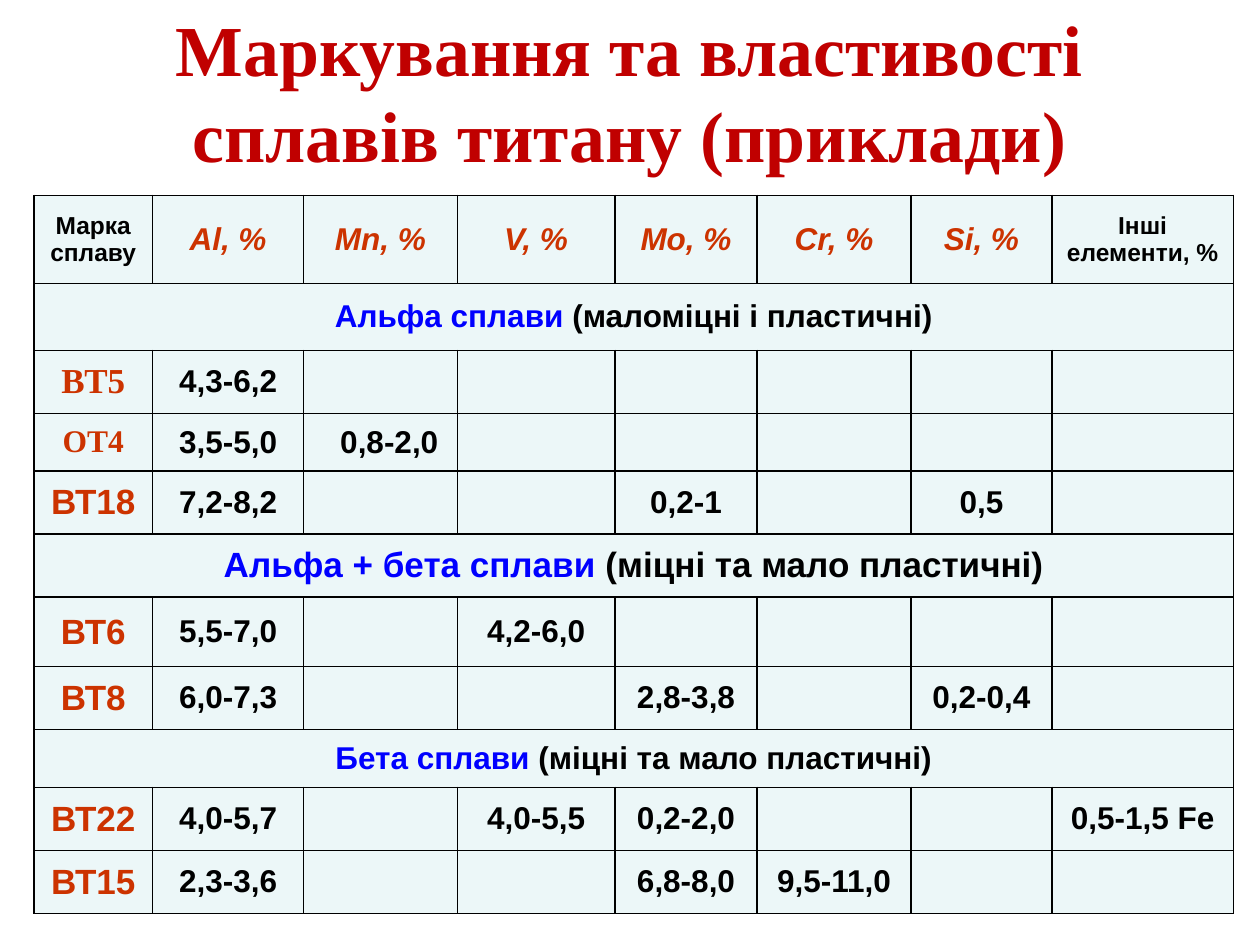
from lxml import etree
from pptx import Presentation
from pptx.dml.color import RGBColor
from pptx.enum import text
from pptx.oxml import ns
from pptx.util import Inches, Pt

BLACK = RGBColor(0x00, 0x00, 0x00)
BLUE = RGBColor(0x00, 0x00, 0xFF)
CRIMSON = RGBColor(0xC0, 0x00, 0x00)
ORANGE = RGBColor(0xCC, 0x33, 0x00)
PALE_BLUE = RGBColor(0xEC, 0xF7, 0xF8)
SANS, SERIF = "Arial", "Times New Roman"

TITLE = "Маркування та властивості сплавів титану (приклади)"
ELEMENTS = ["Al", "Mn", "V", "Mo", "Cr", "Si"]
HEADERS = ["Марка сплаву", *(f"{element}, %" for element in ELEMENTS), "Інші елементи, %"]

# Group: name, description, text size, alloys.
# Alloy: grade, grade font, grade size, contents by column number.
GROUPS = [
    ("Альфа сплави ", "(маломіцні і пластичні)", 18, [
        ("ВТ5", SERIF, 20, {1: "4,3-6,2"}),
        ("ОТ4", SERIF, 18, {1: "3,5-5,0", 2: "0,8-2,0"}),
        ("ВТ18", SANS, 20, {1: "7,2-8,2", 4: "0,2-1", 6: "0,5"}),
    ]),
    ("Альфа + бета сплави ", "(міцні та мало пластичні)", 20, [
        ("ВТ6", SANS, 20, {1: "5,5-7,0", 3: "4,2-6,0"}),
        ("ВТ8", SANS, 20, {1: "6,0-7,3", 4: "2,8-3,8", 6: "0,2-0,4"}),
    ]),
    ("Бета сплави ", "(міцні та мало пластичні)", 18, [
        ("ВТ22", SANS, 20, {1: "4,0-5,7", 3: "4,0-5,5", 4: "0,2-2,0", 7: "0,5-1,5 Fe"}),
        ("ВТ15", SANS, 20, {1: "2,3-3,6", 4: "6,8-8,0", 5: "9,5-11,0"}),
    ]),
]
COLUMN_WIDTHS = [0.94, 1.2, 1.22, 1.25, 1.13, 1.22, 1.12, 1.44]
ROW_HEIGHTS = [0.7, 0.53, 0.5, 0.46, 0.5, 0.5, 0.55, 0.5, 0.46, 0.5, 0.5]


def write(frame, pieces, size, font=SANS, italic=False):
    """Fill a text frame with one centred bold paragraph of (wording, colour) pieces."""
    paragraph = frame.paragraphs[0]
    paragraph.alignment = text.PP_ALIGN.CENTER
    paragraph.font.name = font
    paragraph.font.size = Pt(size)
    paragraph.font.bold = True
    paragraph.font.italic = italic
    for wording, color in pieces:
        run = paragraph.add_run()
        run.text = wording
        run.font.color.rgb = color


def style_cell(cell):
    """Give a cell thin black borders, a pale fill and middle anchoring."""
    properties = cell._tc.get_or_add_tcPr()
    for side in ("a:lnL", "a:lnR", "a:lnT", "a:lnB"):
        line = etree.SubElement(properties, ns.qn(side), w=str(Pt(1)))
        fill = etree.SubElement(line, ns.qn("a:solidFill"))
        etree.SubElement(fill, ns.qn("a:srgbClr"), val=str(BLACK))
    cell.fill.solid()
    cell.fill.fore_color.rgb = PALE_BLUE
    cell.vertical_anchor = text.MSO_ANCHOR.MIDDLE


def add_title(slide):
    frame = slide.shapes.add_textbox(Inches(0.5), Inches(0.13), Inches(9), Inches(1.18)).text_frame
    frame.word_wrap = True
    frame.vertical_anchor = text.MSO_ANCHOR.MIDDLE
    write(frame, [(TITLE, CRIMSON)], 41, SERIF)


def add_alloy_table(slide):
    table = slide.shapes.add_table(
        len(ROW_HEIGHTS), len(COLUMN_WIDTHS), Inches(0.27), Inches(1.55),
        Inches(sum(COLUMN_WIDTHS)), Inches(sum(ROW_HEIGHTS))).table
    table.first_row = table.horz_banding = False
    for column, width in zip(table.columns, COLUMN_WIDTHS):
        column.width = Inches(width)
    for row, height in zip(table.rows, ROW_HEIGHTS):
        row.height = Inches(height)
    for cell in table.iter_cells():
        style_cell(cell)

    last = len(HEADERS) - 1
    for column, header in enumerate(HEADERS):
        is_element = 0 < column < last
        write(table.cell(0, column).text_frame, [(header, ORANGE if is_element else BLACK)],
              18 if is_element else 14, italic=is_element)

    row = 1
    for name, description, size, alloys in GROUPS:
        table.cell(row, 0).merge(table.cell(row, last))
        write(table.cell(row, 0).text_frame, [(name, BLUE), (description, BLACK)], size)
        for row, (grade, font, grade_size, contents) in enumerate(alloys, row + 1):
            write(table.cell(row, 0).text_frame, [(grade, ORANGE)], grade_size, font)
            for column, content in contents.items():
                write(table.cell(row, column).text_frame, [(content, BLACK)], 18)
                if HEADERS[column] == "Mn, %":
                    table.cell(row, column).margin_left = Inches(0.24)
        row += 1


def main():
    presentation = Presentation()
    presentation.slide_width = Inches(10)
    presentation.slide_height = Inches(7.5)
    slide = presentation.slides.add_slide(presentation.slide_layouts[6])
    add_title(slide)
    add_alloy_table(slide)
    presentation.save("out.pptx")


if __name__ == "__main__":
    main()
